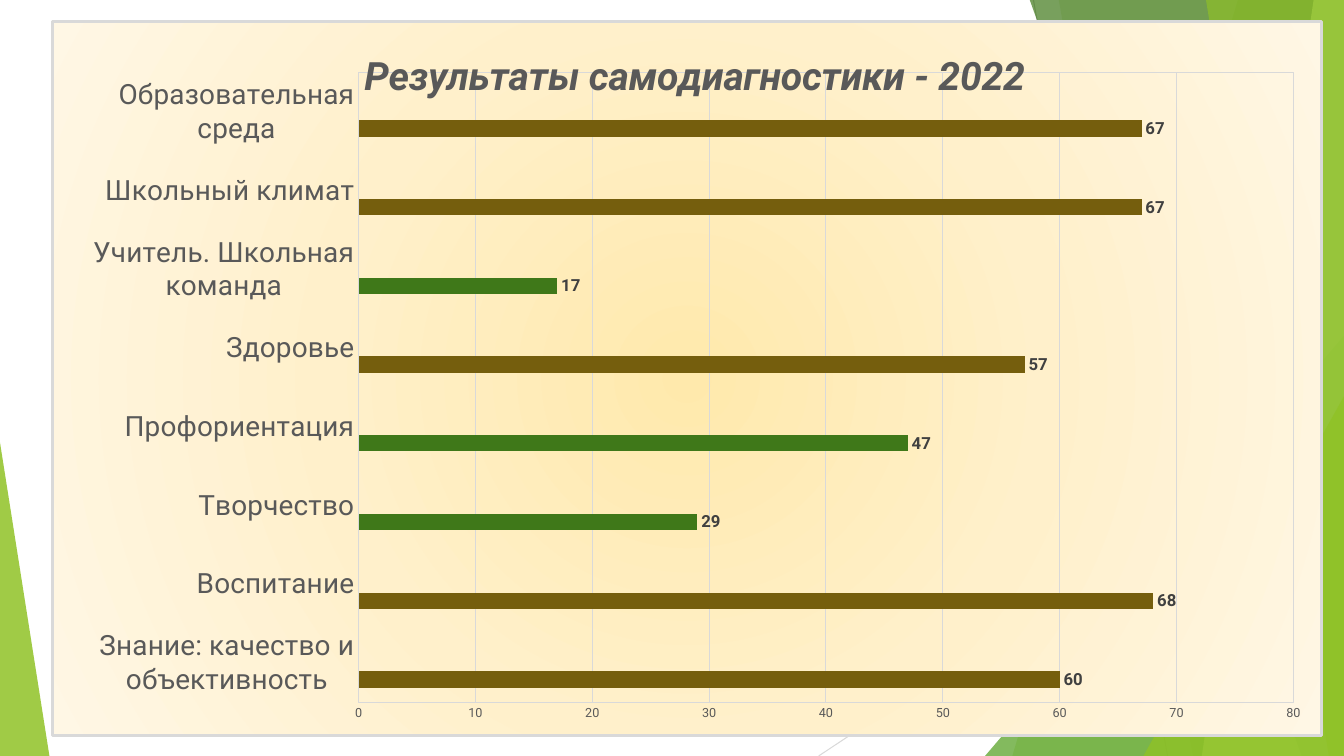
from lxml import etree
from pptx import Presentation
from pptx.chart.data import CategoryChartData
from pptx.dml.color import RGBColor
from pptx.enum.chart import XL_CHART_TYPE, XL_LABEL_POSITION, XL_TICK_MARK
from pptx.enum.shapes import MSO_CONNECTOR, MSO_SHAPE
from pptx.oxml import parse_xml
from pptx.oxml.ns import nsdecls, qn
from pptx.util import Inches, Pt

BAR_CLUSTERED = XL_CHART_TYPE.BAR_CLUSTERED
OUTSIDE_END = XL_LABEL_POSITION.OUTSIDE_END
NO_TICK = XL_TICK_MARK.NONE
STRAIGHT = MSO_CONNECTOR.STRAIGHT
TRIANGLE = MSO_SHAPE.ISOSCELES_TRIANGLE

WIDTH, HEIGHT = 13.33, 7.5
FONT = "Roboto"
COLORS = {
    "lime": "90C226", "green": "54A021", "dark green": "3F7819",
    "pale lime": "C0E474", "gold": "E6B91E", "brown": "755E0D",
    "gray line": "BFBFBF", "light line": "D9D9D9",
    "text": "595959", "label": "404040",
    "center": "FFE9AC", "middle": "FFF0CB", "edge": "FFF7E5",
}
RESULTS = [
    ("Знание: качество и объективность", 60),
    ("Воспитание", 68),
    ("Творчество", 29),
    ("Профориентация", 47),
    ("Здоровье", 57),
    ("Учитель. Школьная команда", 17),
    ("Школьный климат", 67),
    ("Образовательная среда", 67),
]
STRONG_RESULT = 50
# Ribbons reach the right edge: top left x, bottom left x, color, opacity
RIBBONS_BACK = [(12.28, 10.04, "lime", 30), (10.5, 11.83, "lime", 20)]
RIBBONS_FRONT = [(10.21, 12.91, "dark green", 70), (13.03, 11.92, "pale lime", 70),
                 (11.96, 13.18, "lime", 65)]


class SlideBuilder:
    def __init__(self, slide):
        self.slide = slide

    def color(self, name):
        return RGBColor.from_string(COLORS[name])

    def style_font(self, font, size, color, bold=False, italic=False):
        font.name, font.size = FONT, Pt(size)
        font.bold, font.italic = bold, italic
        font.color.rgb = self.color(color)

    def style_line(self, line, color, width=0.75):
        line.color.rgb = self.color(color)
        line.width = Pt(width)

    def line(self, start, end, color):
        connector = self.slide.shapes.add_connector(
            STRAIGHT, *(Inches(value) for value in start + end))
        self.style_line(connector.line, color)
        etree.SubElement(connector._element.spPr, qn("a:effectLst"))

    def paint(self, shape, color, opacity):
        shape.shadow.inherit = False
        shape.line.fill.background()
        shape.fill.solid()
        shape.fill.fore_color.rgb = self.color(color)
        color_element = shape._element.spPr.find(".//" + qn("a:srgbClr"))
        etree.SubElement(color_element, qn("a:alpha"), val=str(opacity * 1000))

    def ribbon(self, top_x, bottom_x, color, opacity):
        builder = self.slide.shapes.build_freeform(
            Inches(top_x), Inches(-0.01), scale=1.0)
        corners = [(WIDTH, -0.01), (WIDTH, HEIGHT), (bottom_x, HEIGHT)]
        builder.add_line_segments([(Inches(x), Inches(y)) for x, y in corners])
        self.paint(builder.convert_to_shape(), color, opacity)

    def triangle(self, left, top, width, apex, color, opacity):
        """Add a triangle that stands on the bottom edge of the slide."""
        shape = self.slide.shapes.add_shape(
            TRIANGLE, Inches(left), Inches(top), Inches(width), Inches(HEIGHT - top))
        shape.adjustments[0] = apex
        self.paint(shape, color, opacity)

    def bar_chart(self, title, results, left, top, width, height):
        data = CategoryChartData()
        data.categories = [name for name, _ in results]
        data.add_series("Series 1", [value for _, value in results])
        for name in ("Series 2", "Series 3"):
            data.add_series(name, [None] * len(results))
        chart = self.slide.shapes.add_chart(
            BAR_CLUSTERED, Inches(left), Inches(top), Inches(width), Inches(height),
            data).chart
        chart.has_legend = False
        chart.font.name, chart.font.size = FONT, Pt(10)
        self.chart_title(chart, title)
        self.chart_axes(chart)
        self.chart_bars(chart.plots[0], results)
        self.chart_background(chart)

    def chart_title(self, chart, title):
        chart.has_title = True
        run = chart.chart_title.text_frame.paragraphs[0].add_run()
        run.text = title
        self.style_font(run.font, 28, "text", bold=True, italic=True)
        element = chart.chart_title._element
        overlay = element.find(qn("c:overlay"))
        overlay.set("val", "1")
        self.set_layout(element, overlay, {"xMode": "edge", "yMode": "edge",
                                           "x": 0.24, "y": 0.03})

    def chart_axes(self, chart):
        for axis, size in ((chart.category_axis, 20), (chart.value_axis, 9)):
            axis.major_tick_mark = axis.minor_tick_mark = NO_TICK
            self.style_font(axis.tick_labels.font, size, "text")
        self.style_line(chart.category_axis.format.line, "light line")
        value_axis = chart.value_axis
        value_axis.minimum_scale, value_axis.maximum_scale = 0, 80
        value_axis.major_unit = 10
        value_axis.format.line.fill.background()
        self.style_line(value_axis.major_gridlines.format.line, "light line")

    def chart_bars(self, plot, results):
        plot.gap_width, plot.overlap = 182, 0
        plot.vary_by_categories = False
        for series, color in zip(plot.series, ("lime", "green", "gold")):
            series.invert_if_negative = False
            series.format.fill.solid()
            series.format.fill.fore_color.rgb = self.color(color)
        scores = plot.series[0]
        for index, (_, value) in enumerate(results):
            fill = scores.points[index].format.fill
            fill.solid()
            fill.fore_color.rgb = self.color(
                "brown" if value > STRONG_RESULT else "dark green")
        labels = scores.data_labels
        labels.show_value = True
        labels.position = OUTSIDE_END
        self.style_font(labels.font, 12, "label", bold=True)

    def set_layout(self, parent, following, settings):
        """Place a chart part by fractions of the chart, ahead of a sibling."""
        for old_layout in parent.findall(qn("c:layout")):
            parent.remove(old_layout)
        layout = etree.Element(qn("c:layout"))
        manual = etree.SubElement(layout, qn("c:manualLayout"))
        for name, value in settings.items():
            etree.SubElement(manual, qn("c:" + name), val=str(value))
        following.addprevious(layout)

    def shape_properties(self, fill, width):
        return parse_xml(
            f'<c:spPr {nsdecls("c", "a")}>{fill}<a:ln w="{Pt(width)}"><a:solidFill>'
            f'<a:srgbClr val="{COLORS["light line"]}"/></a:solidFill></a:ln></c:spPr>')

    def chart_background(self, chart):
        chart_element = chart._chartSpace.find(qn("c:chart"))
        plot_area = chart_element.find(qn("c:plotArea"))
        self.set_layout(plot_area, plot_area.find(qn("c:barChart")), {
            "layoutTarget": "inner", "xMode": "edge", "yMode": "edge",
            "x": 0.241, "y": 0.072, "w": 0.737, "h": 0.882})
        plot_area.append(self.shape_properties("<a:noFill/>", 0.75))
        stops = "".join(
            f'<a:gs pos="{position * 1000}"><a:srgbClr val="{COLORS[name]}"/></a:gs>'
            for position, name in ((0, "center"), (50, "middle"), (100, "edge")))
        gradient = (
            f'<a:gradFill><a:gsLst>{stops}</a:gsLst><a:path path="circle">'
            '<a:fillToRect l="50000" t="50000" r="50000" b="50000"/>'
            '</a:path></a:gradFill>')
        chart_element.addnext(self.shape_properties(gradient, 2))


def main():
    presentation = Presentation()
    presentation.slide_width = Inches(WIDTH)
    presentation.slide_height = Inches(HEIGHT)
    builder = SlideBuilder(presentation.slides.add_slide(presentation.slide_layouts[6]))

    builder.line((10.25, 0), (11.58, HEIGHT), "gray line")
    builder.line((WIDTH, 4.03), (8.12, HEIGHT), "light line")
    for ribbon in RIBBONS_BACK:
        builder.ribbon(*ribbon)
    builder.triangle(9.77, 3.33, 3.56, 1, "green", 72)
    for ribbon in RIBBONS_FRONT:
        builder.ribbon(*ribbon)
    builder.triangle(11.34, 3.93, 1.99, 1, "lime", 80)
    builder.triangle(0, 4.39, 0.49, 0, "lime", 85)
    builder.bar_chart("Результаты самодиагностики - 2022", RESULTS,
                      0.51, 0.2, 12.61, 7.11)
    presentation.save("out.pptx")


if __name__ == "__main__":
    main()
